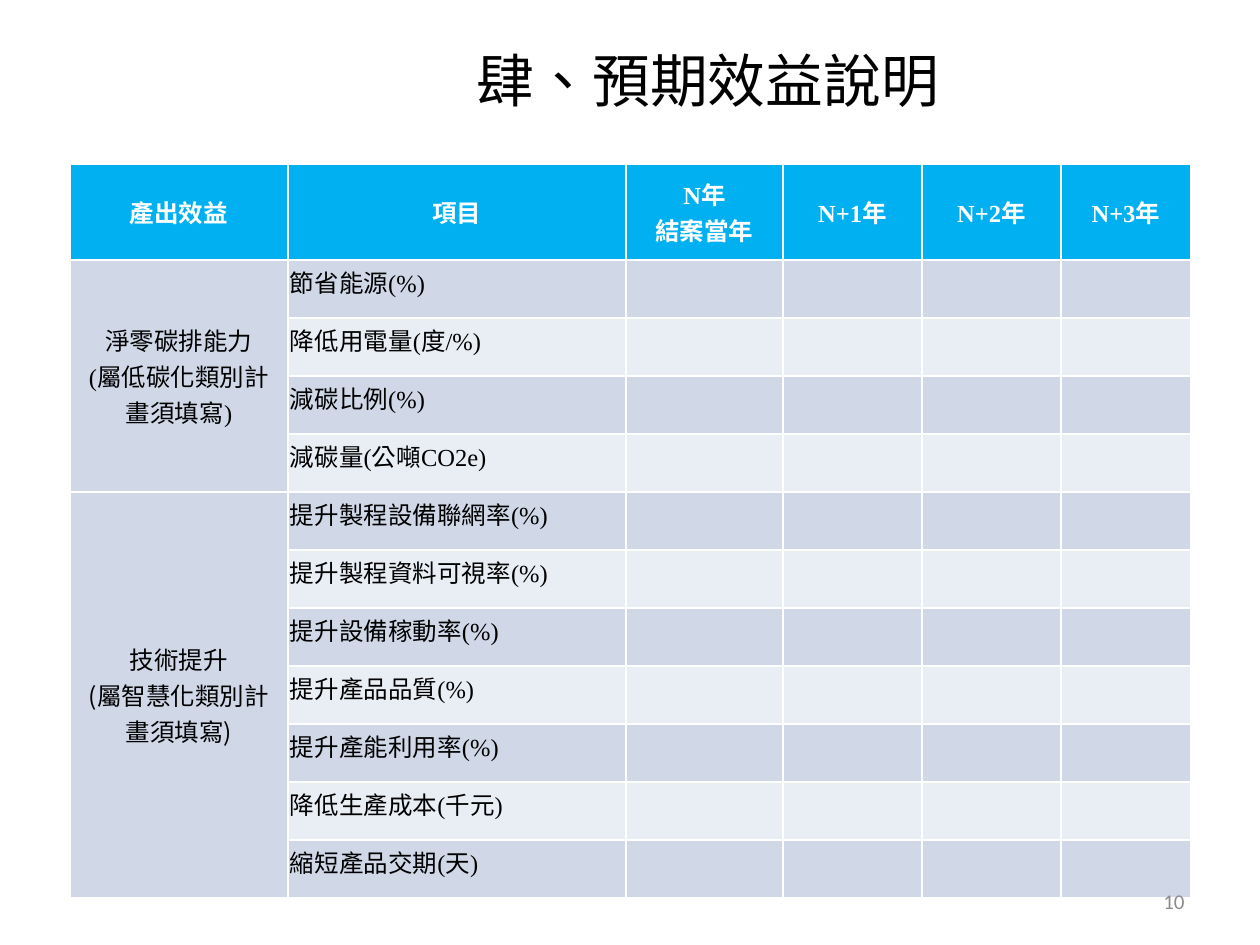
from pptx import Presentation
from pptx.dml.color import RGBColor
from pptx.enum.lang import MSO_LANGUAGE_ID
from pptx.enum.text import MSO_ANCHOR, PP_ALIGN
from pptx.oxml.ns import qn
from pptx.util import Pt
from lxml import etree

PX = 914400 / 126
LEFT, CENTER, RIGHT = PP_ALIGN.LEFT, PP_ALIGN.CENTER, PP_ALIGN.RIGHT
MIDDLE = MSO_ANCHOR.MIDDLE
CHINESE = MSO_LANGUAGE_ID.TRADITIONAL_CHINESE
SERIF, SANS, PAGE_FONT = "Times New Roman", "Noto Sans CJK SC", "Calibri"
BLACK = RGBColor(0x00, 0x00, 0x00)
WHITE = RGBColor(0xFF, 0xFF, 0xFF)
GRAY = RGBColor(0x8C, 0x8C, 0x8C)
HEADER_BLUE = RGBColor(0x00, 0xB0, 0xF0)
BANDS = (RGBColor(0xD0, 0xD8, 0xE8), RGBColor(0xE9, 0xED, 0xF4))

COLUMN_WIDTHS = (218, 338, 157, 139, 139, 130)
HEADER_HEIGHT, ROW_HEIGHT = 96, 58
HEADINGS = ("產出效益", "項目", "N年\n結案當年", "N+1年", "N+2年", "N+3年")
BENEFITS = (
    (("淨零碳排能力", "(屬低碳化類別計畫須填寫)"), SERIF,
     ("節省能源(%)", "降低用電量(度/%)", "減碳比例(%)", "減碳量(公噸CO2e)")),
    (("技術提升", "(屬智慧化類別計畫須填寫)"), SANS,
     ("提升製程設備聯網率(%)", "提升製程資料可視率(%)", "提升設備稼動率(%)",
      "提升產品品質(%)", "提升產能利用率(%)", "降低生產成本(千元)",
      "縮短產品交期(天)")),
)


def px(length):
    """Turn whole pixels into EMU."""
    return round(length * PX)


def write(frame, *lines, size=14, font=SERIF, color=BLACK, bold=False,
          align=CENTER, spacing=None):
    """Fill a text frame with one paragraph per line."""
    frame.word_wrap = True
    for index, line in enumerate(lines):
        paragraph = frame.paragraphs[0] if index == 0 else frame.add_paragraph()
        paragraph.text = line
        paragraph.alignment = align
        if spacing:
            paragraph.line_spacing = spacing
        for run in paragraph.runs:
            run.font.size = Pt(size)
            run.font.bold = bold
            run.font.color.rgb = color
            run.font.name = font
            run.font.language_id = CHINESE
            east_asian = etree.SubElement(run.font._element, qn("a:ea"))
            east_asian.set("typeface", SANS)


def add_label(slide, box, text, **text_format):
    """Place a vertically centred text box."""
    frame = slide.shapes.add_textbox(*map(px, box)).text_frame
    frame.vertical_anchor = MIDDLE
    write(frame, text, **text_format)


def paint(cell, color, tight=False):
    """Fill a cell and centre its text vertically, with narrow margins if tight."""
    cell.fill.solid()
    cell.fill.fore_color.rgb = color
    cell.vertical_anchor = MIDDLE
    if tight:
        cell.margin_left = cell.margin_right = px(2)
        cell.margin_top = cell.margin_bottom = 0


def add_benefit_table(slide, left, top):
    """Build the table of expected benefits by group and year."""
    item_count = sum(len(items) for _, _, items in BENEFITS)
    height = HEADER_HEIGHT + item_count * ROW_HEIGHT
    table = slide.shapes.add_table(
        item_count + 1, len(HEADINGS), px(left), px(top),
        px(sum(COLUMN_WIDTHS)), px(height)).table
    for column, width in zip(table.columns, COLUMN_WIDTHS):
        column.width = px(width)
    for index, row in enumerate(table.rows):
        row.height = px(ROW_HEIGHT if index else HEADER_HEIGHT)

    for column, heading in enumerate(HEADINGS):
        cell = table.cell(0, column)
        paint(cell, HEADER_BLUE, tight=column > 1)
        write(cell.text_frame, heading, color=WHITE, bold=True)

    first = 1
    for group, group_font, items in BENEFITS:
        for row, item in enumerate(items, first):
            for column in range(1, len(HEADINGS)):
                paint(table.cell(row, column), BANDS[(row - 1) % 2], tight=column == 1)
            write(table.cell(row, 1).text_frame, item, align=LEFT, spacing=Pt(12))
        group_cell = table.cell(first, 0)
        group_cell.merge(table.cell(first + len(items) - 1, 0))
        paint(group_cell, BANDS[0])
        write(group_cell.text_frame, *group, font=group_font)
        first += len(items)


def main():
    """Create the slide and save it."""
    presentation = Presentation()
    presentation.slide_width, presentation.slide_height = px(1260), px(945)
    slide = presentation.slides.add_slide(presentation.slide_layouts[6])
    add_benefit_table(slide, 70, 164)
    add_label(slide, (903, 876, 294, 50), "10", size=12, font=PAGE_FONT,
              color=GRAY, align=RIGHT)
    add_label(slide, (141, 16, 1134, 127), "肆、預期效益說明", size=33, font=SANS)
    presentation.save("out.pptx")


if __name__ == "__main__":
    main()
